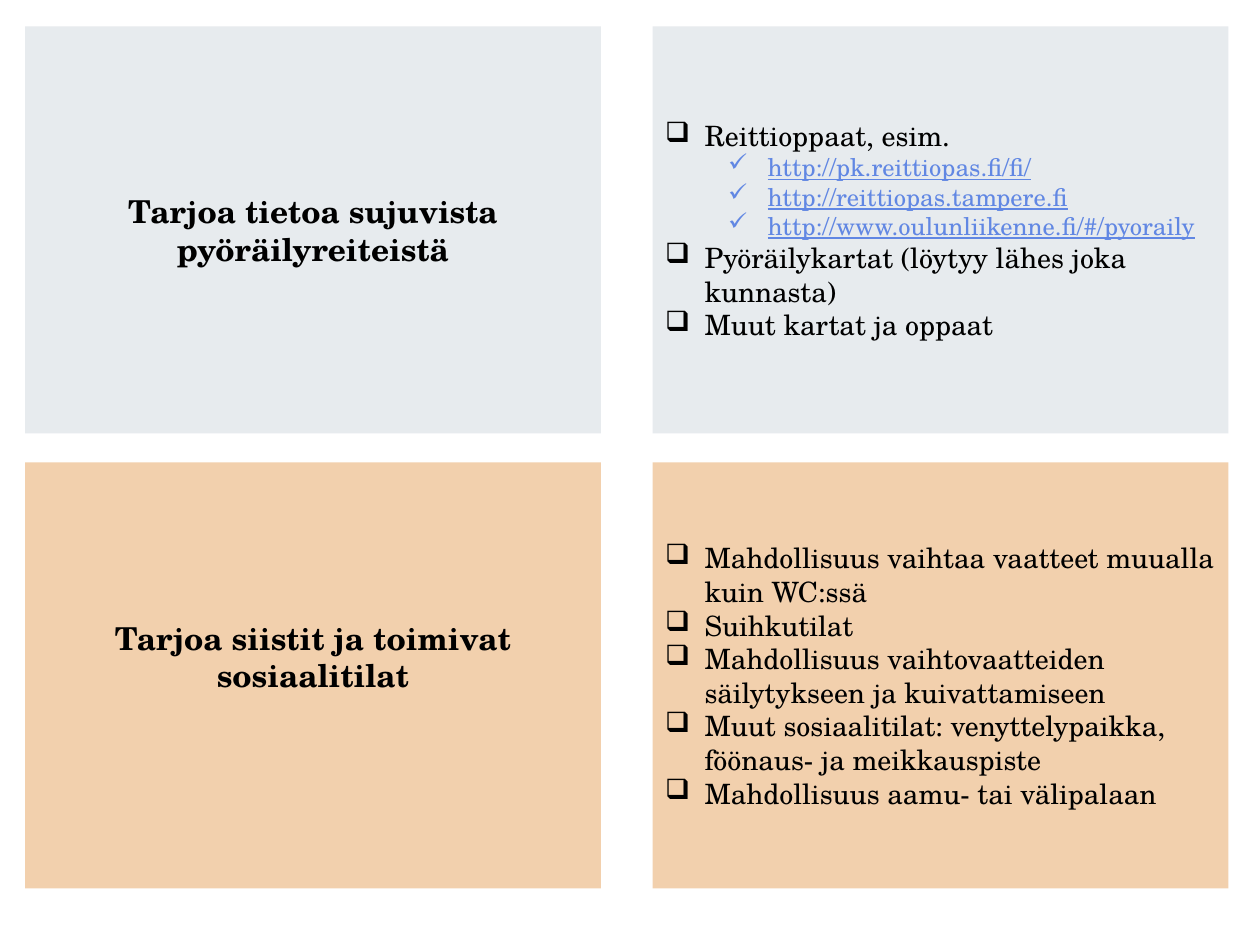
import pptx
import pptx.dml.color
import pptx.enum.shapes
import pptx.enum.text
import pptx.oxml.ns
import pptx.util
from lxml import etree

Pt = pptx.util.Pt
ALIGN = pptx.enum.text.PP_ALIGN
FONT = "TeX Gyre Schola"
GREY, PEACH, BLACK, LINK = "E7EBEE", "F2D0AD", "000000", "6187E3"
CARD_WIDTH = 329
TOPIC_LEFT, IDEAS_LEFT = 14.4, 373

# top, height, fill, room kept free under the topic, topic, ideas as (level, text)
ROWS = [
    (15.1, 232.6, GREY, 0, "Tarjoa tietoa sujuvista pyöräilyreiteistä", [
        (0, "Reittioppaat, esim."),
        (1, "http://pk.reittiopas.fi/fi/"),
        (1, "http://reittiopas.tampere.fi"),
        (1, "http://www.oulunliikenne.fi/#/pyoraily"),
        (0, "Pyöräilykartat (löytyy lähes joka kunnasta)"),
        (0, "Muut kartat ja oppaat"),
    ]),
    (264.2, 243.4, PEACH, 21.6, "Tarjoa siistit ja toimivat sosiaalitilat", [
        (0, "Mahdollisuus vaihtaa vaatteet muualla kuin WC:ssä"),
        (0, "Suihkutilat"),
        (0, "Mahdollisuus vaihtovaatteiden säilytykseen ja kuivattamiseen"),
        (0, "Muut sosiaalitilat: venyttelypaikka, föönaus- ja meikkauspiste"),
        (0, "Mahdollisuus aamu- tai välipalaan"),
    ]),
]


def rgb(value):
    return pptx.dml.color.RGBColor.from_string(value)


def add_card(page, box, fill):
    card = page.shapes.add_shape(
        pptx.enum.shapes.MSO_SHAPE.RECTANGLE, *(Pt(length) for length in box))
    card.shadow.inherit = False
    card.fill.solid()
    card.fill.fore_color.rgb = rgb(fill)
    card.line.fill.background()
    frame = card.text_frame
    frame.word_wrap = True
    frame.vertical_anchor = pptx.enum.text.MSO_ANCHOR.MIDDLE
    return frame


def write(para, text, size, color=BLACK, bold=False, underline=False, align=ALIGN.LEFT):
    para.alignment = align
    span = para.add_run()
    span.text = text
    span.font.name = FONT
    span.font.size = Pt(size)
    span.font.bold = bold
    span.font.underline = underline
    span.font.color.rgb = rgb(color)


def add_bullet(para, mark, indent, hanging):
    properties = para._p.get_or_add_pPr()
    properties.set("marL", str(Pt(indent)))
    properties.set("indent", str(-Pt(hanging)))
    bullet = etree.SubElement(properties, pptx.oxml.ns.qn("a:buChar"))
    bullet.set("char", mark)


def add_topic_card(page, box, fill, topic, room_below):
    frame = add_card(page, box, fill)
    frame.margin_bottom = Pt(3.6 + room_below)
    write(frame.paragraphs[0], topic, 18, bold=True, align=ALIGN.CENTER)


def add_ideas_card(page, box, fill, ideas):
    frame = add_card(page, box, fill)
    for index, (level, text) in enumerate(ideas):
        para = frame.add_paragraph() if index else frame.paragraphs[0]
        para.level = level
        add_bullet(para, "✓" if level else "❑", 22.5 + 36 * level, 22.5)
        if level:
            write(para, text, 14, color=LINK, underline=True)
        else:
            write(para, text, 16)


def main():
    deck = pptx.Presentation()
    deck.slide_width, deck.slide_height = Pt(720), Pt(540)
    page = deck.slides.add_slide(deck.slide_layouts[6])
    for top, height, fill, room_below, topic, ideas in ROWS:
        add_topic_card(page, (TOPIC_LEFT, top, CARD_WIDTH, height), fill, topic, room_below)
        add_ideas_card(page, (IDEAS_LEFT, top, CARD_WIDTH, height), fill, ideas)
    deck.save("out.pptx")


if __name__ == "__main__":
    main()
